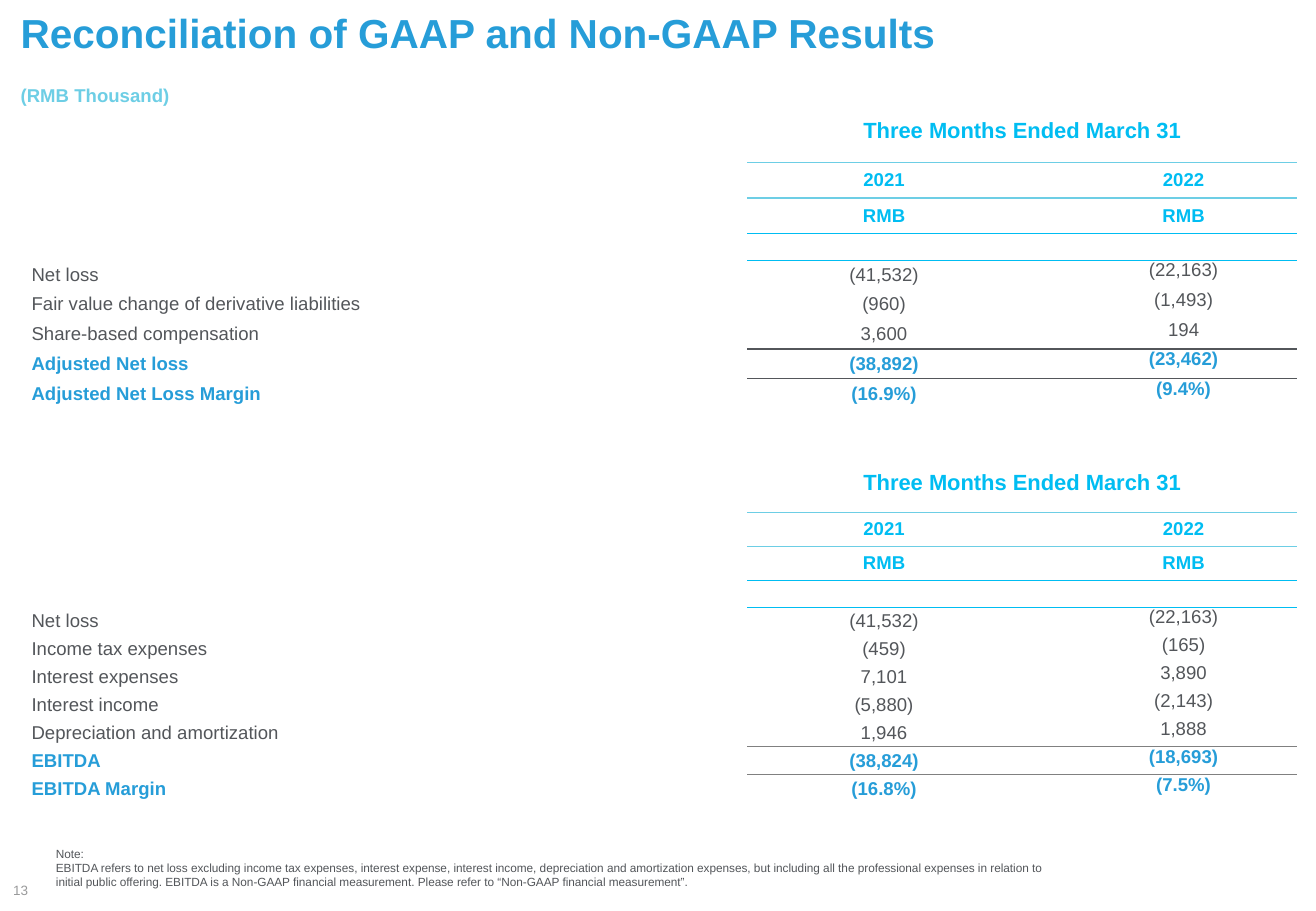
"""Build the GAAP to non-GAAP reconciliation slide with two tables."""
from lxml.etree import SubElement
from pptx import Presentation
from pptx.dml.color import RGBColor
from pptx.enum.text import MSO_ANCHOR, PP_ALIGN
from pptx.oxml.ns import qn
from pptx.util import Inches, Pt

BLUE, CYAN, PALE, INK = "269DD8", "00BDF2", "6DCEE5", "53565A"
NO_STYLE = "{2D5ABB26-0587-4C30-8999-92F81FD0307C}"

deck = Presentation()
deck.slide_width, deck.slide_height = Inches(10.83), Inches(7.5)
across, down = deck.slide_width / 100, deck.slide_height / 100
slide = deck.slides.add_slide(deck.slide_layouts[6])


def write(paragraph, text, size, color, bold=False, align=PP_ALIGN.LEFT):
    paragraph.text, paragraph.alignment = text, align
    font = paragraph.font
    font.name, font.size, font.bold = "Arial", Pt(size), bold
    font.color.rgb = RGBColor.from_string(color)


def rule(cell, side, color, points):
    line = SubElement(cell._tc.get_or_add_tcPr(), qn(f"a:{side}"), w=str(Pt(points)))
    SubElement(SubElement(line, qn("a:solidFill")), qn("a:srgbClr"), val=color)


note = (
    "EBITDA refers to net loss excluding income tax expenses, interest expense, interest income, "
    "depreciation and amortization expenses, but including all the professional expenses in relation to "
    "initial public offering. EBITDA is a Non-GAAP financial measurement. "
    "Please refer to “Non-GAAP financial measurement”."
)
captions = [
    (1.57, 0.93, 96.95, 5.33, ["Reconciliation of GAAP and Non-GAAP Results"], 24, BLUE, True),
    (1.57, 9.2, 12.65, 2.53, ["(RMB Thousand)"], 11, PALE, True),
    (4.25, 92.93, 77, 4.67, ["Note:", note], 7, INK, False),
]
for left, top, width, height, lines, size, color, bold in captions:
    frame = slide.shapes.add_textbox(
        int(left * across), int(top * down), int(width * across), int(height * down)).text_frame
    frame.word_wrap = True
    frame.margin_left = frame.margin_right = frame.margin_top = frame.margin_bottom = 0
    for index, line in enumerate(lines):
        write(frame.add_paragraph() if index else frame.paragraphs[0], line, size, color, bold)

column_shares = [52.45, 2.77, 20.78, 3.79, 17.17]
statements = [
    (10.8, [4, 3.07, 3.87, 3.87, 2.93], 3.26, INK, [
        ("Net loss", "(41,532)", "(22,163)"),
        ("Fair value change of derivative liabilities", "(960)", "(1,493)"),
        ("Share-based compensation", "3,600", "194"),
        ("Adjusted Net loss", "(38,892)", "(23,462)"),
        ("Adjusted Net Loss Margin", "(16.9%)", "(9.4%)"),
    ]),
    (49.73, [3.6, 2.93, 3.73, 3.73, 2.93], 3.07, "808080", [
        ("Net loss", "(41,532)", "(22,163)"),
        ("Income tax expenses", "(459)", "(165)"),
        ("Interest expenses", "7,101", "3,890"),
        ("Interest income", "(5,880)", "(2,143)"),
        ("Depreciation and amortization", "1,946", "1,888"),
        ("EBITDA", "(38,824)", "(18,693)"),
        ("EBITDA Margin", "(16.8%)", "(7.5%)"),
    ]),
]
for top, header_shares, item_share, total_color, items in statements:
    row_shares = header_shares + [item_share] * len(items)
    total_row = len(row_shares) - 2
    table = slide.shapes.add_table(
        len(row_shares), len(column_shares), int(1.57 * across), int(top * down),
        int(sum(column_shares) * across), int(sum(row_shares) * down)).table
    table.first_row = table.horz_banding = False
    table._tbl.tblPr.find(qn("a:tableStyleId")).text = NO_STYLE
    for column, share in zip(table.columns, column_shares):
        column.width = int(share * across)
    for row, share in zip(table.rows, row_shares):
        row.height = int(share * down)

    rules = [(2, (2, 3, 4), PALE, 0.75), (3, (2, 4), PALE, 0.75),
             (4, (2, 3, 4), CYAN, 0.5), (total_row, (2, 3, 4), total_color, 1)]
    for below, columns, color, points in rules:
        for column in columns:
            rule(table.cell(below - 1, column), "lnB", color, points)
            rule(table.cell(below, column), "lnT", color, points)

    texts = {(0, 2): "Three Months Ended March 31", (2, 2): "2021", (2, 4): "2022",
             (3, 2): "RMB", (3, 4): "RMB"}
    for row, item in enumerate(items, len(header_shares)):
        texts.update({(row, column): text for column, text in zip((0, 2, 4), item)})
    for row in range(len(row_shares)):
        for column in range(len(column_shares)):
            cell = table.cell(row, column)
            cell.fill.background()
            cell.margin_left = cell.margin_right = cell.margin_top = cell.margin_bottom = 0
            paragraph = cell.text_frame.paragraphs[0]
            if (row, column) not in texts:
                SubElement(paragraph._p, qn("a:endParaRPr"), sz="800")
                continue
            header, total = row < len(header_shares), row >= total_row
            if column == 0:
                cell.margin_left = Inches(0.09)
            if header or column < 4:
                cell.vertical_anchor = MSO_ANCHOR.MIDDLE
            write(paragraph, texts[row, column], 13 if row == 0 else 11,
                  CYAN if header else BLUE if total else INK, header or total,
                  PP_ALIGN.CENTER if column else PP_ALIGN.LEFT)
    table.cell(0, 0).merge(table.cell(1, 0))
    table.cell(0, 2).merge(table.cell(1, 4))

page_number = slide.shapes.add_textbox(
    0, int(96.67 * down), int(3.05 * across), int(2.13 * down)).text_frame
page_number.word_wrap = True
page_number.vertical_anchor = MSO_ANCHOR.MIDDLE
write(page_number.paragraphs[0], "13", 8, "999A9B", align=PP_ALIGN.RIGHT)

deck.save("out.pptx")
